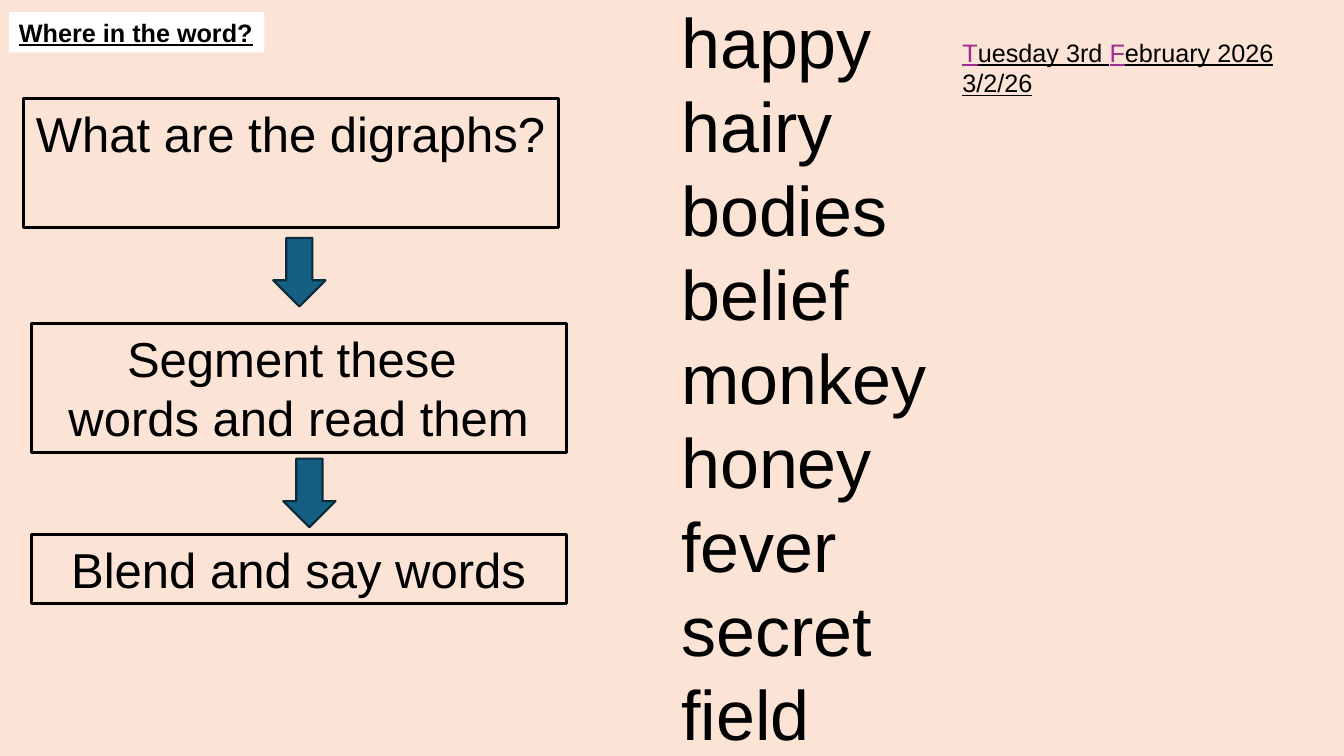
from pptx import Presentation
from pptx.dml.color import RGBColor as Rgb
from pptx.enum.shapes import MSO_SHAPE as Kind
from pptx.enum.text import MSO_ANCHOR as Anchor, PP_ALIGN as Align
from pptx.util import Pt

THEME = {
    "font": "Arial",
    "back": "FBE3D6", "ink": "000000", "paper": "FFFFFF",
    "arrow": "156082", "edge": "092A39", "accent": "A02B93",
    "small": 18, "step": 35, "word": 50,
}

TITLE = ["Where in the word?"]
WORDS = ["happy", "hairy", "bodies", "belief", "monkey",
         "honey", "fever", "secret", "field"]
DATE = [
    [("T", "accent"), ("uesday 3rd ", "ink"),
     ("F", "accent"), ("ebruary 2026", "ink")],
    "3/2/26",
]
STEPS = [
    (16.6, 70.6, 92.2, ["What are the digraphs?"]),
    (22.3, 231.1, 92.2, ["Segment these ", "words and read them"]),
    (22.3, 381.6, 49.7, ["Blend and say words"]),
]
ARROWS = [(195.1, 169.9), (202.3, 327.6)]
STEP_W = 382.3
ARROW_W, ARROW_H = 37.4, 49


def tint(name):
    return Rgb.from_string(THEME[name])


def write(shape, lines, size="small", align=Align.LEFT, bold=False, under=False):
    frame = shape.text_frame
    frame.word_wrap = True
    frame.vertical_anchor = Anchor.TOP
    for i, line in enumerate(lines):
        para = frame.add_paragraph() if i else frame.paragraphs[0]
        para.alignment = align
        parts = [(line, "ink")] if isinstance(line, str) else line
        for text, color in parts:
            run = para.add_run()
            run.text = text
            font = run.font
            font.name = THEME["font"]
            font.size = Pt(THEME[size])
            font.bold = bold
            font.underline = under
            font.color.rgb = tint(color)


def draw(slide, kind, box, fill=None, line=None, width=0):
    shape = slide.shapes.add_shape(kind, *map(Pt, box))
    shape.shadow.inherit = False
    if fill:
        shape.fill.solid()
        shape.fill.fore_color.rgb = tint(fill)
    else:
        shape.fill.background()
    if line:
        shape.line.color.rgb = tint(line)
        shape.line.width = Pt(width)
    else:
        shape.line.fill.background()
    return shape


def main():
    deck = Presentation()
    deck.slide_width, deck.slide_height = Pt(960), Pt(540)
    slide = deck.slides.add_slide(deck.slide_layouts[6])
    slide.background.fill.solid()
    slide.background.fill.fore_color.rgb = tint("back")

    title = draw(slide, Kind.RECTANGLE, (6.5, 8.6, 182.5, 28.8), fill="paper")
    write(title, TITLE, bold=True, under=True)

    words = slide.shapes.add_textbox(Pt(479.5), Pt(-4.3), Pt(594.7), Pt(702.7))
    write(words, WORDS, size="word")

    for left, top, high, lines in STEPS:
        step = draw(slide, Kind.RECTANGLE, (left, top, STEP_W, high),
                    line="ink", width=2.25)
        write(step, lines, size="step", align=Align.CENTER)

    for left, top in ARROWS:
        draw(slide, Kind.DOWN_ARROW, (left, top, ARROW_W, ARROW_H),
             fill="arrow", line="edge", width=1.5)

    date = slide.shapes.add_textbox(Pt(680.4), Pt(23), Pt(260), Pt(51.1))
    write(date, DATE, under=True)

    deck.save("out.pptx")


if __name__ == "__main__":
    main()
